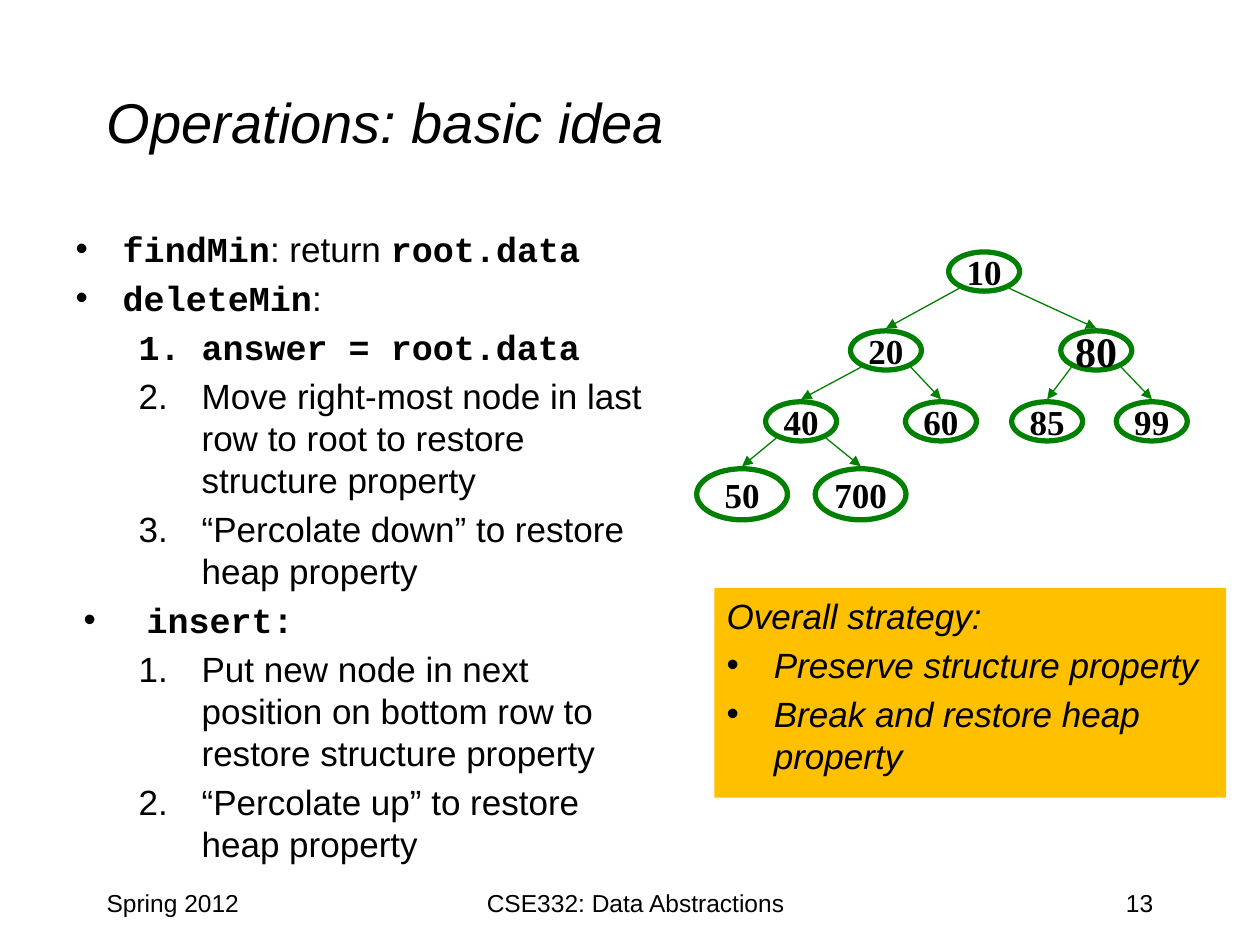
import pptx
import pptx.util
import pptx.dml.color
import pptx.enum.shapes
import pptx.enum.text
import pptx.oxml.ns
from lxml import etree

Cm, Pt = pptx.util.Cm, pptx.util.Pt
ALIGN = pptx.enum.text.PP_ALIGN
ANCHOR = pptx.enum.text.MSO_ANCHOR
SHAPE = pptx.enum.shapes.MSO_SHAPE
qn = pptx.oxml.ns.qn

SANS, MONO, SERIF = "Arial", "Courier New", "Times New Roman"
BLACK, GREEN, GOLD = "000000", "008000", "FFC000"

TITLE = "Operations: basic idea"
BULLET, STEP, WIDE = (0, 0.95, -0.95), (1, 2.54, -1.27), (0, 1.43, -1.27)
BODY = [
    (BULLET, [("findMin", MONO), (": return ", SANS), ("root.data", MONO)]),
    (BULLET, [("deleteMin", MONO), (":", SANS)]),
    (STEP, [("answer = root.data", MONO)]),
    (STEP, [("Move right-most node in last row to root to restore structure property", SANS)]),
    (STEP, [("“Percolate down” to restore heap property", SANS)]),
    (WIDE, [("insert:", MONO)]),
    (STEP, [("Put new node in next position on bottom row to restore structure property", SANS)]),
    (STEP, [("“Percolate up” to restore heap property", SANS)]),
]
PLAN = [
    (None, "Overall strategy:"),
    (BULLET, "Preserve structure property"),
    (BULLET, "Break and restore heap property"),
]
FOOT = [
    ("Spring 2012", 1.9, 5.3, ALIGN.LEFT),
    ("CSE332: Data Abstractions", 8.05, 9.53, ALIGN.CENTER),
    ("13", 18.2, 5.3, ALIGN.RIGHT),
]
TOPS = [5.08, 6.67, 8.1, 9.45]
SIZES = [(1.43, 0.79)] * 3 + [(1.83, 1.03)]
HEAP = {
    "10": (0, 19.84, None),
    "20": (1, 17.86, "10"),
    "80": (1, 22.1, "10"),
    "40": (2, 16.15, "20"),
    "60": (2, 18.97, "20"),
    "85": (2, 21.11, "80"),
    "99": (2, 23.22, "80"),
    "50": (3, 14.96, "40"),
    "700": (3, 17.35, "40"),
}


def color(code):
    return pptx.dml.color.RGBColor.from_string(code)


def style(font, size, name=SANS, bold=False, italic=False):
    font.size, font.name = Pt(size), name
    font.bold, font.italic = bold, italic
    font.color.rgb = color(BLACK)


def mark(para, kind):
    level, left, hang = kind
    para.level = level
    props = para._p.get_or_add_pPr()
    props.set("marL", str(Cm(left)))
    props.set("indent", str(Cm(hang)))
    if level:
        etree.SubElement(props, qn("a:buFont"), typeface="+mj-lt")
        etree.SubElement(props, qn("a:buAutoNum"), type="arabicPeriod")
    else:
        etree.SubElement(props, qn("a:buFont"), typeface=SANS)
        etree.SubElement(props, qn("a:buChar"), char="•")


def place(shape, left, top, width, height):
    shape.left, shape.top = Cm(left), Cm(top)
    shape.width, shape.height = Cm(width), Cm(height)
    frame = shape.text_frame
    frame.word_wrap = True
    frame.auto_size = pptx.enum.text.MSO_AUTO_SIZE.NONE
    return frame


def lines(frame, count):
    for _ in range(count - 1):
        frame.add_paragraph()
    for para in frame.paragraphs[1:]:
        para.space_before = Pt(4)
    frame.paragraphs[0].space_before = Pt(0)
    return frame.paragraphs


def add_arrow(shapes, start, end):
    arrow = shapes.add_connector(
        pptx.enum.shapes.MSO_CONNECTOR.STRAIGHT, *map(Cm, start + end))
    arrow.line.color.rgb = color(GREEN)
    arrow.line.width = Pt(0.75)
    etree.SubElement(arrow.line._get_or_add_ln(), qn("a:tailEnd"), type="triangle")
    etree.SubElement(arrow._element.spPr, qn("a:effectLst"))


def add_node(shapes, label, row, mid):
    width, height = SIZES[row]
    node = shapes.add_shape(SHAPE.OVAL, *map(Cm, (mid - width / 2, TOPS[row], width, height)))
    node.shadow.inherit = False
    node.fill.background()
    node.line.color.rgb = color(GREEN)
    node.line.width = Pt(3)
    frame = node.text_frame
    frame.word_wrap = False
    frame.vertical_anchor = ANCHOR.MIDDLE
    para = frame.paragraphs[0]
    para.text, para.alignment = label, ALIGN.CENTER
    style(para.font, 24 if label == "80" else 20, SERIF, bold=True)


def main():
    deck = pptx.Presentation()
    deck.slide_width, deck.slide_height = Cm(25.4), Cm(19.05)
    slide = deck.slides.add_slide(deck.slide_layouts[1])
    shapes = slide.shapes

    frame = place(shapes.title, 1.9, 0.85, 21.6, 3.18)
    frame.vertical_anchor = ANCHOR.MIDDLE
    head = frame.paragraphs[0]
    head.text, head.alignment = TITLE, ALIGN.LEFT
    style(head.font, 32, italic=True)

    frame = place(slide.placeholders[1], 1.27, 4.45, 12.28, 13.33)
    for para, (kind, runs) in zip(lines(frame, len(BODY)), BODY):
        mark(para, kind)
        for text, name in runs:
            run = para.add_run()
            run.text = text
            style(run.font, 20, name, bold=name == MONO)

    for text, left, width, align in FOOT:
        para = place(shapes.add_textbox(0, 0, 0, 0), left, 17.78, width, 1.27).paragraphs[0]
        para.text, para.alignment = text, align
        style(para.font, 14)

    for label, (row, mid, up) in HEAP.items():
        add_node(shapes, label, row, mid)
        if up:
            level, base, _ = HEAP[up]
            side = 0.5 if mid > base else -0.5
            add_arrow(shapes, (base + side, TOPS[level] + 0.73), (mid, TOPS[row] - 0.05))

    box = shapes.add_shape(SHAPE.RECTANGLE, 0, 0, 0, 0)
    box.shadow.inherit = False
    box.fill.solid()
    box.fill.fore_color.rgb = color(GOLD)
    box.line.fill.background()
    frame = place(box, 14.4, 11.85, 10.32, 4.23)
    frame.vertical_anchor = ANCHOR.TOP
    for para, (kind, text) in zip(lines(frame, len(PLAN)), PLAN):
        para.text, para.alignment = text, ALIGN.LEFT
        if kind:
            mark(para, kind)
        style(para.font, 20, italic=True)

    deck.save("out.pptx")


if __name__ == "__main__":
    main()
